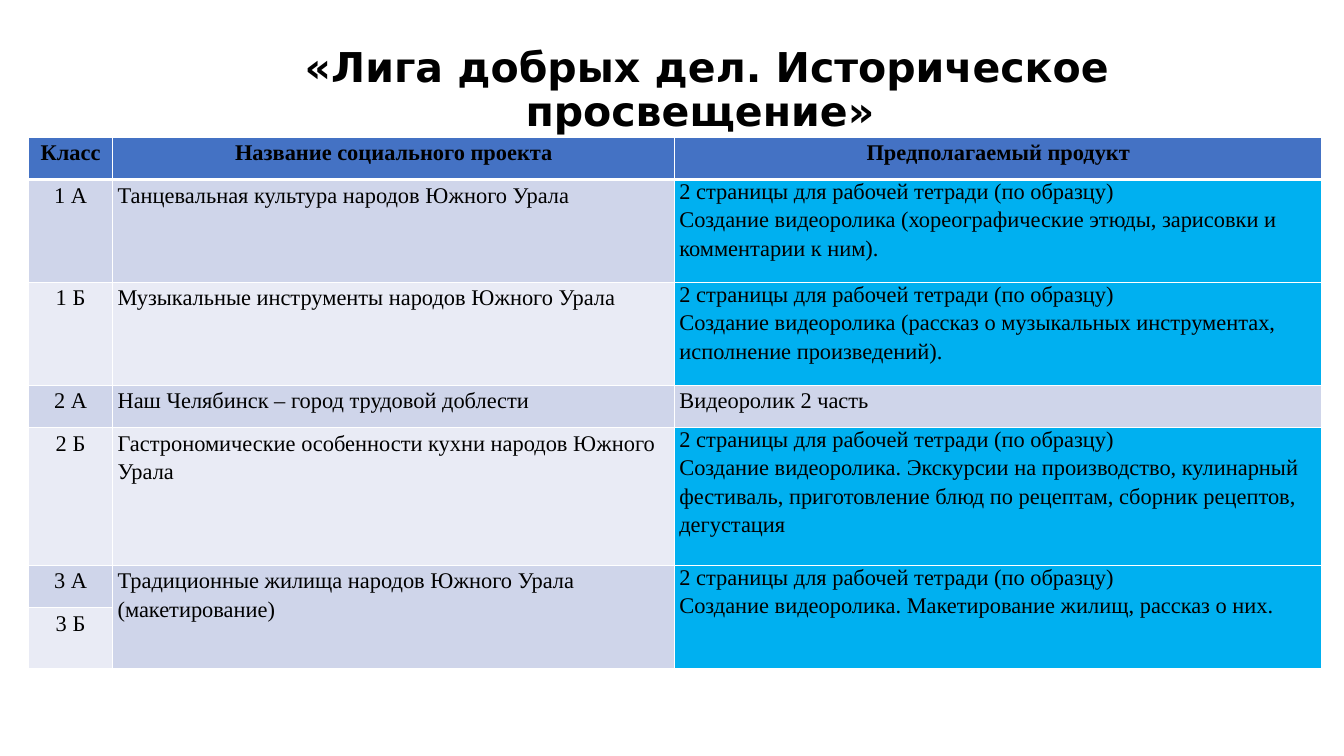
from dataclasses import dataclass

from lxml.etree import SubElement
from pptx import Presentation
from pptx.dml.color import RGBColor
from pptx.enum.text import MSO_ANCHOR, PP_ALIGN
from pptx.oxml.ns import qn
from pptx.util import Inches, Pt

# Content
TITLE = "«Лига добрых дел. Историческое просвещение» "
HEADER = ["Класс", "Название социального проекта", "Предполагаемый продукт"]
WORKBOOK = "2 страницы для рабочей тетради (по образцу)"
PROJECTS = [  # class, project, product paragraphs
    ("1 А", "Танцевальная культура народов Южного Урала",
     [WORKBOOK, "Создание видеоролика (хореографические этюды, зарисовки и комментарии к ним)."]),
    ("1 Б", "Музыкальные инструменты народов Южного Урала",
     [WORKBOOK, "Создание видеоролика (рассказ о музыкальных инструментах, исполнение произведений)."]),
    ("2 А", "Наш Челябинск – город трудовой доблести", ["Видеоролик 2 часть"]),
    ("2 Б", "Гастрономические особенности кухни народов Южного Урала",
     [WORKBOOK, "Создание видеоролика. Экскурсии на производство, кулинарный фестиваль, "
                "приготовление блюд по рецептам, сборник рецептов, дегустация"]),
    ("3 А", "Традиционные жилища народов Южного Урала (макетирование)",
     [WORKBOOK, "Создание видеоролика. Макетирование жилищ, рассказ о них."]),
    ("3 Б", None, None),  # shares the project and product of the row above
]

# Layout in inches
SLIDE_SIZE = (20, 11.25)
TITLE_AREA = (2.42, 0.27, 16.21, 2.18)
TABLE_CORNER = (0.42, 2.04)
COLUMNS = [1.26, 8.36, 9.63]
ROWS = [0.63, 1.53, 1.53, 0.63, 2.05, 0.63, 0.9]
CELL_INSET = 0.07


@dataclass(frozen=True)
class Theme:
    text: str = "000000"
    header: str = "4472C4"
    bands: tuple = ("CFD5EA", "E9EBF5")
    product: str = "00B0F0"
    border: str = "FFFFFF"
    title_font: str = "DejaVu Sans"
    table_font: str = "Times New Roman"
    title_size: int = 44
    table_size: int = 24
    thin: int = 1
    thick: int = 3


THEME = Theme()


def write(para, text, font, size, bold, align, spacing):
    para.alignment = align
    para.line_spacing = spacing
    span = para.add_run()
    span.text = text
    span.font.name = font
    span.font.size = Pt(size)
    span.font.bold = bold
    span.font.color.rgb = RGBColor.from_string(THEME.text)


def draw_borders(cell, row):
    properties = cell._tc.get_or_add_tcPr()
    for side in "LRTB":
        under_header = (row, side) in ((0, "B"), (1, "T"))
        width = THEME.thick if under_header else THEME.thin
        line = SubElement(properties, qn(f"a:ln{side}"), w=str(Pt(width)))
        SubElement(SubElement(line, qn("a:solidFill")), qn("a:srgbClr"), val=THEME.border)


def style_cell(cell, row, fill):
    cell.margin_left = cell.margin_right = Inches(CELL_INSET)
    cell.margin_top = cell.margin_bottom = 0
    draw_borders(cell, row)
    cell.fill.solid()
    cell.fill.fore_color.rgb = RGBColor.from_string(fill)


def fill_cell(cell, row, column, lines):
    centred = row == 0 or column == 0
    for index, text in enumerate(lines):
        frame = cell.text_frame
        para = frame.add_paragraph() if index else frame.paragraphs[0]
        opens_list = index == 0 and len(lines) > 1
        write(para, text, THEME.table_font, THEME.table_size, row == 0,
              PP_ALIGN.CENTER if centred else PP_ALIGN.LEFT, 1.0 if opens_list else 1.15)
        if row and column == 0:
            para.space_after = Pt(10)


deck = Presentation()
deck.slide_width, deck.slide_height = map(Inches, SLIDE_SIZE)
page = deck.slides.add_slide(deck.slide_layouts[6])

# Title
box = page.shapes.add_textbox(*map(Inches, TITLE_AREA))
box.text_frame.word_wrap = True
box.text_frame.vertical_anchor = MSO_ANCHOR.MIDDLE
write(box.text_frame.paragraphs[0], TITLE, THEME.title_font, THEME.title_size,
      True, PP_ALIGN.CENTER, 0.9)

# Project table
area = (*TABLE_CORNER, sum(COLUMNS), sum(ROWS))
table = page.shapes.add_table(len(ROWS), len(COLUMNS), *map(Inches, area)).table
for column, width in zip(table.columns, COLUMNS):
    column.width = Inches(width)
for row, height in zip(table.rows, ROWS):
    row.height = Inches(height)

records = [[[name] for name in HEADER]]
records += [[[grade], project and [project], product] for grade, project, product in PROJECTS]
for row, record in enumerate(records):
    for column, lines in enumerate(record):
        cell = table.cell(row, column)
        fill = THEME.bands[(row - 1) % 2] if row else THEME.header
        if lines and len(lines) > 1:
            fill = THEME.product
        style_cell(cell, row, fill)
        if lines:
            fill_cell(cell, row, column, lines)
        else:
            table.cell(row - 1, column).merge(cell)

deck.save("out.pptx")
